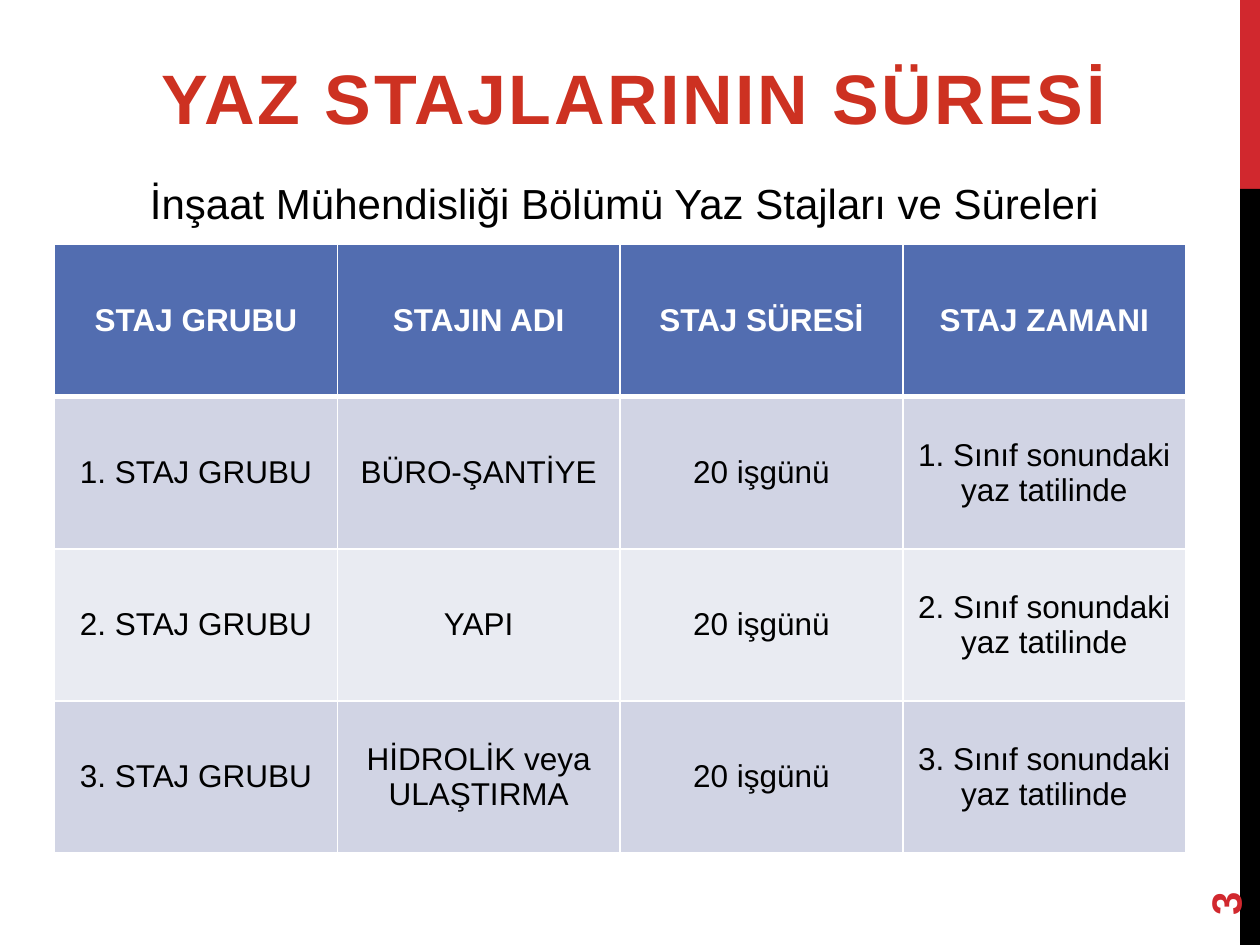
import pptx
import pptx.util
import pptx.dml.color
import pptx.enum.shapes
import pptx.enum.text
import pptx.oxml
import pptx.oxml.ns
from pptx.util import Cm

RGBColor = pptx.dml.color.RGBColor
CENTER = pptx.enum.text.PP_ALIGN.CENTER
LEFT = pptx.enum.text.PP_ALIGN.LEFT
MIDDLE = pptx.enum.text.MSO_ANCHOR.MIDDLE
TOP = pptx.enum.text.MSO_ANCHOR.TOP

RED = RGBColor(0xD1, 0x28, 0x2E)
TITLE_RED = RGBColor(0xCD, 0x31, 0x21)
BLACK = RGBColor(0, 0, 0)
WHITE = RGBColor(0xFF, 0xFF, 0xFF)
HEADER_BLUE = RGBColor(0x52, 0x6D, 0xB0)
BANDS = [RGBColor(0xD1, 0xD4, 0xE4), RGBColor(0xE9, 0xEB, 0xF2)]

ROWS = [
    ["STAJ GRUBU", "STAJIN ADI", "STAJ SÜRESİ", "STAJ ZAMANI"],
    ["1. STAJ GRUBU", "BÜRO-ŞANTİYE", "20 işgünü", "1. Sınıf sonundaki\nyaz tatilinde"],
    ["2. STAJ GRUBU", "YAPI", "20 işgünü", "2. Sınıf sonundaki\nyaz tatilinde"],
    ["3. STAJ GRUBU", "HİDROLİK veya ULAŞTIRMA", "20 işgünü", "3. Sınıf sonundaki\nyaz tatilinde"],
]


def write_text(text_frame, text, size, color, bold=False, alignment=CENTER):
    text_frame.text = text
    text_frame.word_wrap = True
    for paragraph in text_frame.paragraphs:
        paragraph.alignment = alignment
        font = paragraph.font
        font.name = "Arial"
        font.size = pptx.util.Pt(size)
        font.bold = bold
        font.color.rgb = color


def add_side_band(slide, left, top, width, height):
    """Vertical band: a red fifth above a black remainder."""
    red_height = height * 0.2
    for color, offset, part_height in [
        (RED, 0, red_height),
        (BLACK, red_height, height - red_height),
    ]:
        shape = slide.shapes.add_shape(
            pptx.enum.shapes.MSO_SHAPE.RECTANGLE,
            left, int(top + offset), width, int(part_height))
        shape.shadow.inherit = False
        shape.fill.solid()
        shape.fill.fore_color.rgb = color
        shape.line.fill.background()


def place_title(slide, left, top, width, height):
    title = slide.shapes.title
    title.left, title.top, title.width, title.height = left, top, width, height
    title.text_frame.vertical_anchor = TOP
    write_text(title.text_frame, "YAZ STAJLARININ SÜRESİ", 40, TITLE_RED, bold=True)
    title.text_frame.auto_size = pptx.enum.text.MSO_AUTO_SIZE.SHAPE_TO_FIT_TEXT
    # Letter spacing, in hundredths of a point
    for run in title.text_frame.paragraphs[0].runs:
        run.font.size = pptx.util.Pt(40)
        run._r.get_or_add_rPr().set("spc", "150")


def add_subtitle(slide, left, top, width, height):
    text_box = slide.shapes.add_textbox(left, top, width, height)
    write_text(text_box.text_frame,
               "İnşaat Mühendisliği Bölümü Yaz Stajları ve Süreleri", 24, BLACK)


def add_page_number(slide, left, top, width, height):
    text_box = slide.shapes.add_textbox(left, top, width, height)
    text_box.rotation = 270
    text_box.text_frame.vertical_anchor = MIDDLE
    write_text(text_box.text_frame, "3", 24, RED, bold=True, alignment=LEFT)


def set_borders(cell, top=1, bottom=1):
    """White cell borders; widths in points, placed before the fill."""
    properties = cell._tc.get_or_add_tcPr()
    sides = [("lnL", 1), ("lnR", 1), ("lnT", top), ("lnB", bottom)]
    for position, (side, points) in enumerate(sides):
        line = pptx.oxml.parse_xml(
            f'<a:{side} {pptx.oxml.ns.nsdecls("a")} w="{pptx.util.Pt(points)}">'
            f'<a:solidFill><a:srgbClr val="{WHITE}"/></a:solidFill></a:{side}>')
        properties.insert(position, line)


def add_internship_table(slide, left, top, width, height):
    table = slide.shapes.add_table(
        len(ROWS), len(ROWS[0]), left, top, width, height).table
    for row_index, texts in enumerate(ROWS):
        is_header = row_index == 0
        for column_index, text in enumerate(texts):
            cell = table.cell(row_index, column_index)
            cell.vertical_anchor = MIDDLE
            cell.fill.solid()
            cell.fill.fore_color.rgb = (
                HEADER_BLUE if is_header else BANDS[(row_index - 1) % 2])
            write_text(cell.text_frame, text, 18,
                       WHITE if is_header else BLACK, bold=is_header)
            set_borders(cell, top=3 if row_index == 1 else 1,
                        bottom=3 if is_header else 1)


def main():
    presentation = pptx.Presentation()
    presentation.slide_width = Cm(25.4)
    presentation.slide_height = Cm(19.05)
    title_only = presentation.slide_layouts[5]
    slide = presentation.slides.add_slide(title_only)

    add_side_band(slide, Cm(25), 0, Cm(0.4), presentation.slide_height)
    place_title(slide, Cm(1.09), Cm(0.97), Cm(23.39), Cm(1.96))
    add_page_number(slide, Cm(22.86), Cm(16.36), Cm(3.66), Cm(1.02))
    add_subtitle(slide, Cm(0.89), Cm(3.45), Cm(23.39), Cm(1.27))
    add_internship_table(slide, Cm(1.1), Cm(4.93), Cm(22.8), Cm(12.27))

    presentation.save("out.pptx")


if __name__ == "__main__":
    main()
